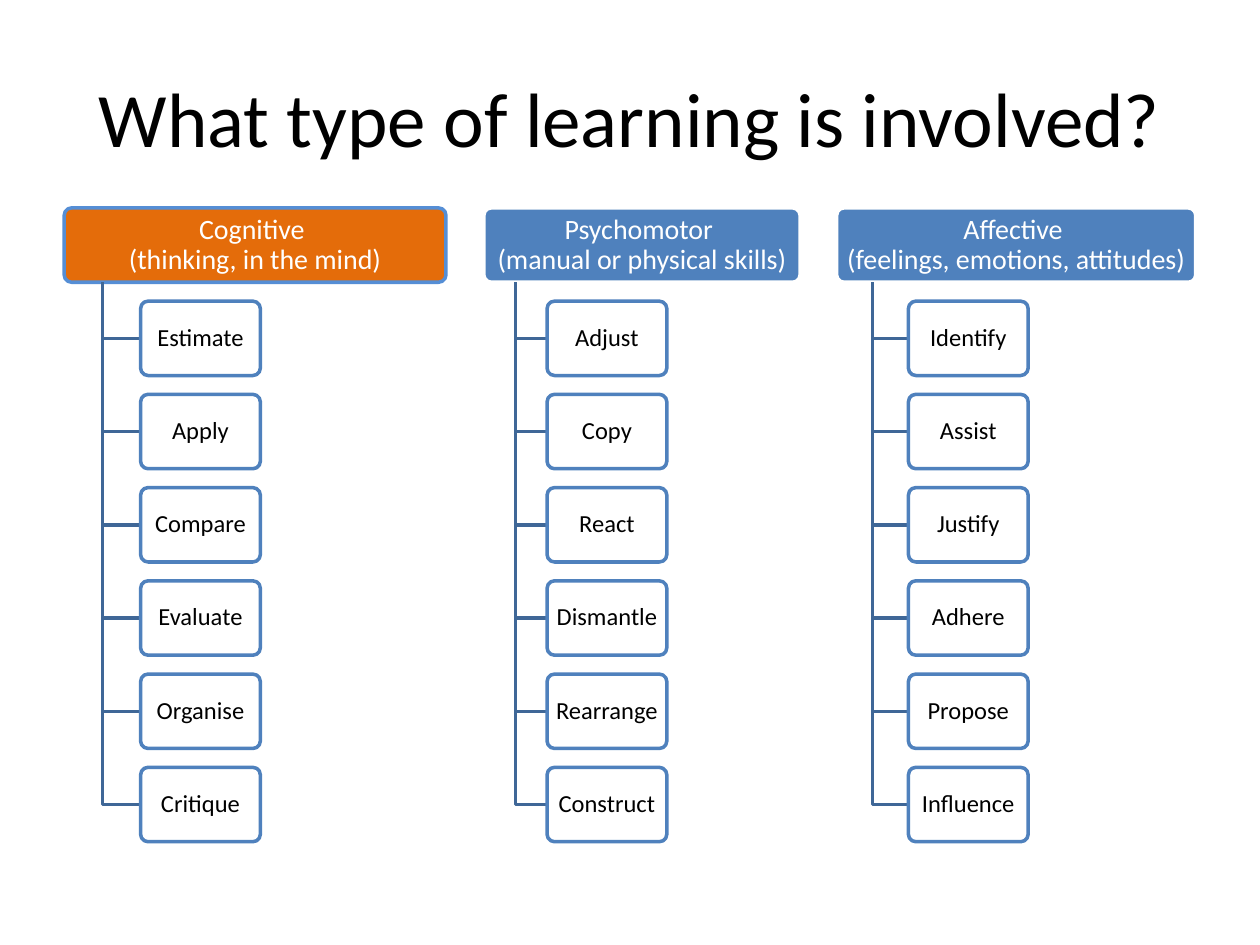
from lxml.etree import SubElement
from pptx import Presentation
from pptx.dml.color import RGBColor
from pptx.enum.shapes import MSO_SHAPE as SHAPE
from pptx.enum.text import MSO_ANCHOR as ANCHOR, PP_ALIGN as ALIGN
from pptx.oxml.ns import qn
from pptx.util import Inches, Pt

COLORS = {
    "black": "000000",
    "white": "FFFFFF",
    "blue": "4F81BD",
    "light_blue": "558ED5",
    "dark_blue": "3F6797",
    "orange": "E46C0A",
}
BOX_H = Inches(0.59)
ITEM_W = Inches(0.95)
PITCH = Inches(0.74)
TOP = Inches(1.65)

# heading, left, width, heading fill, heading line, items
DOMAINS = [
    ("Cognitive \v(thinking, in the mind)", 0.51, 3.03, "orange", "light_blue",
     ["Estimate", "Apply", "Compare", "Evaluate", "Organise", "Critique"]),
    ("Psychomotor \v(manual or physical skills)", 3.84, 2.51, "blue", "white",
     ["Adjust", "Copy", "React", "Dismantle", "Rearrange", "Construct"]),
    ("Affective \v(feelings, emotions, attitudes)", 6.64, 2.85, "blue", "white",
     ["Identify", "Assist", "Justify", "Adhere", "Propose", "Influence"]),
]


def rgb(name):
    return RGBColor.from_string(COLORS[name])


def write(sp, text, size, color="black", spacing=1.0, inset=(0.1, 0.05)):
    tf = sp.text_frame
    tf.word_wrap = True
    tf.vertical_anchor = ANCHOR.MIDDLE
    tf.margin_left = tf.margin_right = Inches(inset[0])
    tf.margin_top = tf.margin_bottom = Inches(inset[1])
    p = tf.paragraphs[0]
    p.text = text
    p.alignment = ALIGN.CENTER
    p.line_spacing = spacing
    for r in p.runs:
        r.font.size = Pt(size)
        r.font.name = "Calibri"
        r.font.color.rgb = rgb(color)


def set_line(sp, color):
    sp.line.color.rgb = rgb(color)
    sp.line.width = Pt(2)
    sp.shadow.inherit = False


def add_box(slide, left, top, width, text, size, fill, line, color, opacity=100):
    sp = slide.shapes.add_shape(SHAPE.ROUNDED_RECTANGLE, left, top, width, BOX_H)
    sp.adjustments[0] = 0.1
    sp.fill.solid()
    sp.fill.fore_color.rgb = rgb(fill)
    if opacity < 100:
        srgb = sp.fill._xPr.find(".//" + qn("a:srgbClr"))
        SubElement(srgb, qn("a:alpha"), val=str(opacity * 1000))
    set_line(sp, line)
    write(sp, text, size, color, spacing=0.9, inset=(0.02, 0.02))


def add_elbow(slide, x, y, end_x, end_y):
    """Draw a line down from (x, y), then right to (end_x, end_y)."""
    builder = slide.shapes.build_freeform(x, y, scale=1.0)
    builder.add_line_segments([(x, end_y), (end_x, end_y)], close=False)
    sp = builder.convert_to_shape()
    sp.fill.background()
    set_line(sp, "dark_blue")


def add_title(slide, text, left, top, width, height):
    write(slide.shapes.add_textbox(left, top, width, height), text, 44)


def add_domain(slide, left, top, width, heading, fill, line, items):
    """Place a heading with its items hanging from a spine below it."""
    add_box(slide, left, top, width, heading, 16, fill, line, "white")
    indent = int(width * 0.1)
    spine_x, item_x = left + indent, left + 2 * indent
    for row, item in enumerate(items, start=1):
        y = top + row * PITCH
        add_elbow(slide, spine_x, top + BOX_H, item_x, y + BOX_H // 2)
        add_box(slide, item_x, y, ITEM_W, item, 14, "white", "blue", "black",
                opacity=90)


def main():
    prs = Presentation()
    prs.slide_width, prs.slide_height = Inches(10), Inches(7.5)
    slide = prs.slides.add_slide(prs.slide_layouts[6])
    add_title(slide, "What type of learning is involved?",
              Inches(0.5), Inches(0.3), Inches(9), Inches(1.25))
    for heading, left, width, fill, line, items in DOMAINS:
        add_domain(slide, Inches(left), TOP, Inches(width),
                   heading, fill, line, items)
    prs.save("out.pptx")


if __name__ == "__main__":
    main()
